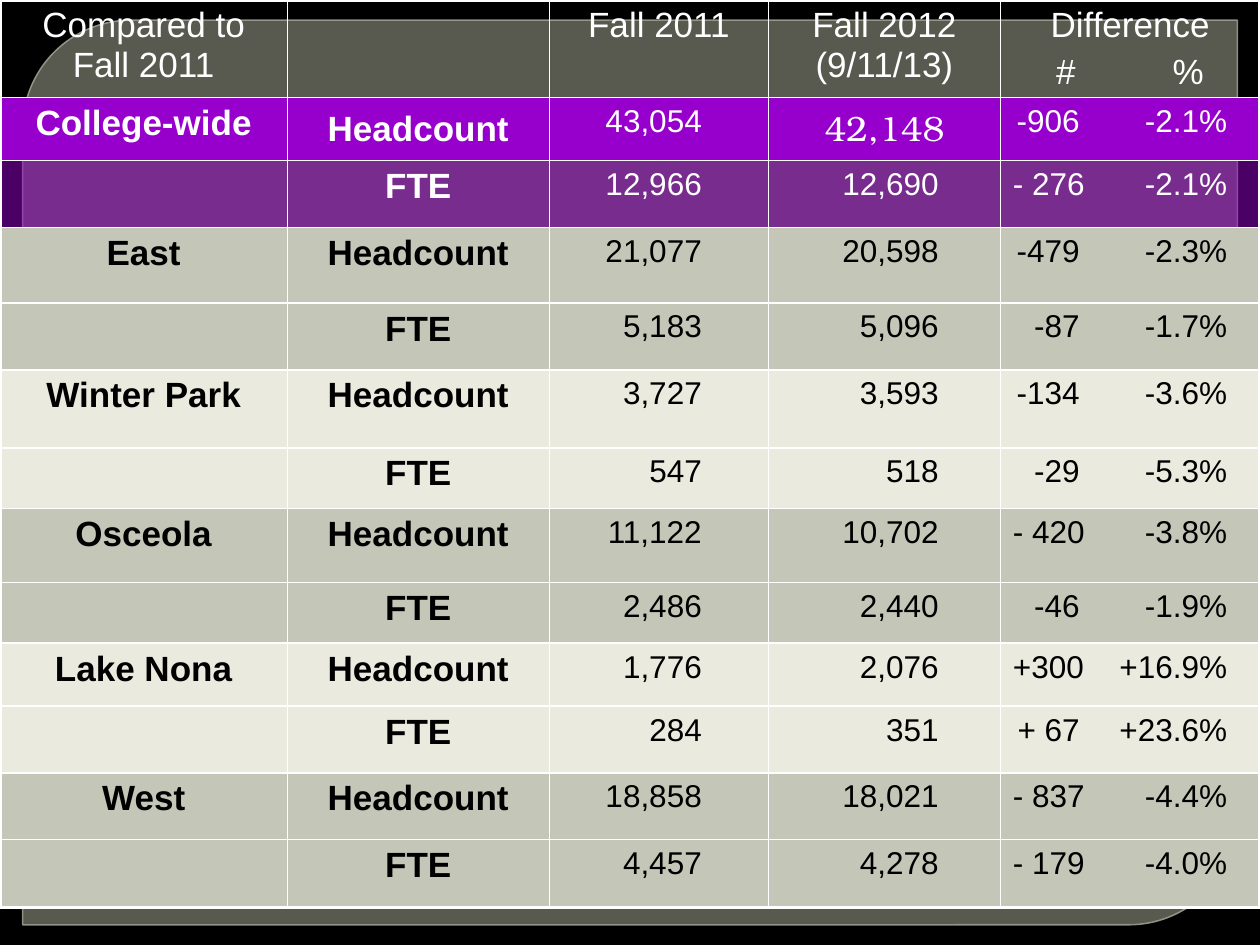
from lxml.etree import SubElement
from pptx import Presentation
from pptx.dml.color import RGBColor
from pptx.enum.shapes import MSO_SHAPE
from pptx.enum.text import MSO_ANCHOR, PP_ALIGN
from pptx.oxml import parse_xml
from pptx.oxml.ns import nsdecls, qn
from pptx.util import Inches, Pt

WHITE, BLACK, PURPLE, DARK, LIGHT = "FFFFFF", "000000", "9700CC", "C4C6B8", "EAEBDE"
COLS = [2.28, 2.08, 1.74, 1.84, 2.06]
ROWS = [0.77, 0.5, 0.53, 0.6, 0.53, 0.62, 0.48, 0.59, 0.48, 0.5, 0.53, 0.53, 0.54]
HEAD = ["Compared to Fall 2011", "", "Fall 2011", "Fall 2012 (9/11/13)",
        "Difference\n\t#\t%"]
# campus, fill, then (fall 2011, fall 2012, change, percent) for headcount and FTE
DATA = [
    ("College-wide", PURPLE, ("43,054", "42,148", "-906", "-2.1%"),
     ("12,966", "12,690", "- 276", "-2.1%")),
    ("East", DARK, ("21,077", "20,598", "-479", "-2.3%"),
     ("5,183", "5,096", "-87", "-1.7%")),
    ("Winter Park", LIGHT, ("3,727", "3,593", "-134", "-3.6%"),
     ("547", "518", "-29", "-5.3%")),
    ("Osceola", DARK, ("11,122", "10,702", "- 420", "-3.8%"),
     ("2,486", "2,440", "-46", "-1.9%")),
    ("Lake Nona", LIGHT, ("1,776", "2,076", "+300", "+16.9%"),
     ("284", "351", "+ 67", "+23.6%")),
    ("West", DARK, ("18,858", "18,021", "- 837", "-4.4%"),
     ("4,457", "4,278", "- 179", "-4.0%")),
]


def paint(fill, color, alpha=100):
    """Make a fill solid, with alpha in percent."""
    fill.solid()
    fill.fore_color.rgb = RGBColor.from_string(color)
    if alpha < 100:
        node = next(fill._xPr.iter(qn("a:srgbClr")))
        SubElement(node, qn("a:alpha")).set("val", str(alpha * 1000))


def set_tabs(para, kind, stops):
    tabs = SubElement(para._p.get_or_add_pPr(), qn("a:tabLst"))
    for stop in stops:
        tab = SubElement(tabs, qn("a:tab"))
        tab.set("pos", str(Inches(stop)))
        tab.set("algn", kind)


prs = Presentation()
prs.slide_width, prs.slide_height = Inches(10), Inches(7.5)
slide = prs.slides.add_slide(prs.slide_layouts[6])
paint(slide.background.fill, BLACK)

panel = slide.shapes.add_shape(MSO_SHAPE.ROUND_2_DIAG_RECTANGLE, Inches(0.18),
                               Inches(0.16), Inches(9.64), Inches(7.18))
panel.adjustments[0], panel.adjustments[1] = 0.12, 0
panel.shadow.inherit = False
paint(panel.fill, "888B7B", 65)
paint(panel.line.fill, "9DA090", 88)
panel.line.width = Pt(0.87)

table = slide.shapes.add_table(len(ROWS), len(COLS), 0, 0, Inches(sum(COLS)),
                               Inches(sum(ROWS))).table
table.first_row = table.horz_banding = False
for col, width in zip(table.columns, COLS):
    col.width = Inches(width)
for row, height in zip(table.rows, ROWS):
    row.height = Inches(height)

# One entry per row: texts, fill, fill opacity, text colour
lines = [(HEAD, None, 100, WHITE)]
for campus, color, *pair in DATA:
    ink = WHITE if color == PURPLE else BLACK
    for name, kind, nums in zip((campus, ""), ("Headcount", "FTE"), pair):
        alpha = 50 if color == PURPLE and kind == "FTE" else 100
        old, new, diff, share = nums
        texts = [name, kind, old, new, f"\t{diff}\t{share}"]
        lines.append((texts, color, alpha, ink))

for r, (texts, color, alpha, ink) in enumerate(lines):
    for c, text in enumerate(texts):
        cell = table.cell(r, c)
        if color:
            paint(cell.fill, color, alpha)
        else:
            cell.fill.background()
        outer = [c == 0, c == len(COLS) - 1, r == 0, r == len(ROWS) - 1]
        for i, (side, edge) in enumerate(zip("LRTB", outer)):
            width = Pt(2.25 if edge else 1)
            cell._tc.get_or_add_tcPr().insert(i, parse_xml(
                f'<a:ln{side} {nsdecls("a")} w="{width}"><a:solidFill>'
                f'<a:srgbClr val="{WHITE}"/></a:solidFill></a:ln{side}>'))
        if not text:
            continue
        cell.text_frame.text = text
        for n, para in enumerate(cell.text_frame.paragraphs):
            para.alignment = PP_ALIGN.CENTER
            if n:
                para.space_before = Pt(4)
            if "\t" in para.text:
                para.alignment = PP_ALIGN.LEFT
                if r:
                    set_tabs(para, "r", (0.53, 1.7))
                else:
                    set_tabs(para, "ctr", (0.42, 1.39))
            elif r and c in (2, 3):
                para.alignment = PP_ALIGN.RIGHT
                cell.margin_right = Inches(0.53 if c == 2 else 0.49)
            for run in para.runs:
                font = run.font
                font.name, font.size = "Arial", Pt(18 if r and c > 1 else 20)
                font.bold = r > 0 and c < 2
                font.color.rgb = RGBColor.from_string(ink)

table.cell(1, 1).vertical_anchor = MSO_ANCHOR.MIDDLE
total = table.cell(1, 3)
total.margin_right = Inches(0.1)
para = total.text_frame.paragraphs[0]
para.alignment = PP_ALIGN.CENTER
para.runs[0].font.name, para.runs[0].font.size = "TeX Gyre Bonum", Pt(20)

prs.save("out.pptx")
